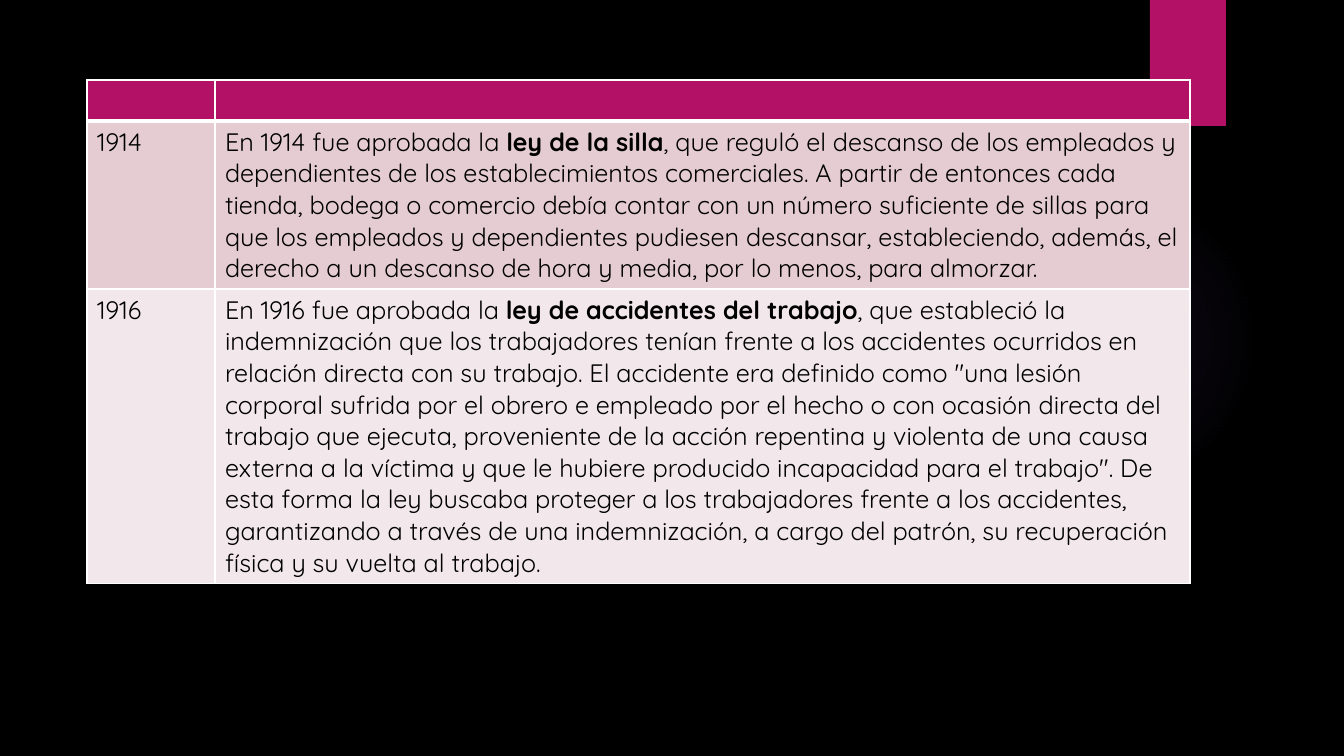
"""Build a slide with a table of two early labour laws."""
from dataclasses import dataclass

from lxml import etree
from pptx import Presentation
from pptx import util as u
from pptx.dml.color import RGBColor
from pptx.enum import shapes
from pptx.oxml import ns

LAWS = [
    ("1914", "En 1914 fue aprobada la ", "ley de la silla",
     ", que reguló el descanso de los empleados y dependientes de los establecimientos "
     "comerciales. A partir de entonces cada tienda, bodega o comercio debía contar con un "
     "número suficiente de sillas para que los empleados y dependientes pudiesen descansar, "
     "estableciendo, además, el derecho a un descanso de hora y media, por lo menos, para "
     "almorzar."),
    ("1916", "En 1916 fue aprobada la ", "ley de accidentes del trabajo",
     ", que estableció la indemnización que los trabajadores tenían frente a los accidentes "
     "ocurridos en relación directa con su trabajo. El accidente era definido como \"una "
     "lesión corporal sufrida por el obrero e empleado por el hecho o con ocasión directa del "
     "trabajo que ejecuta, proveniente de la acción repentina y violenta de una causa externa "
     "a la víctima y que le hubiere producido incapacidad para el trabajo\". De esta forma la "
     "ley buscaba proteger a los trabajadores frente a los accidentes, garantizando a través "
     "de una indemnización, a cargo del patrón, su recuperación física y su vuelta al trabajo."),
]
GLOW = (949, 184, 310, 310)
GLOW_STOPS = [(0, 7), (36, 6), (69, 0)]
RIBBON = (1150, 0, 76, 126)
TABLE_LEFT, TABLE_TOP = 87, 80
COLUMNS = [128, 975]
ROWS = [41, 168, 294]
PX = 914400 / 100.8


@dataclass(frozen=True)
class Theme:
    back: str = "000000"
    accent: str = "B31166"
    glow: str = "9B6BF2"
    ink: str = "000000"
    rule: str = "FFFFFF"
    bands: tuple = ("E5CCD3", "F2E7EA")
    font: str = "Quicksand"
    size: int = 18
    thin: int = 1
    thick: int = 3


THEME = Theme()


def px(length):
    return u.Emu(round(length * PX))


def paint(fill, colour):
    fill.solid()
    fill.fore_color.rgb = RGBColor.from_string(colour)


def add_plain(page, kind, bounds, colour):
    shape = page.shapes.add_shape(kind, *map(px, bounds))
    shape.shadow.inherit = False
    shape.line.fill.background()
    paint(shape.fill, colour)
    return shape


def add_glow(page):
    shape = add_plain(page, shapes.MSO_SHAPE.OVAL, GLOW, THEME.glow)
    stops = "".join(
        f'<a:gs pos="{place * 1000}"><a:srgbClr val="{THEME.glow}">'
        f'<a:alpha val="{alpha * 1000}"/></a:srgbClr></a:gs>'
        for place, alpha in GLOW_STOPS)
    gradient = etree.fromstring(
        f'<a:gradFill {ns.nsdecls("a")}><a:gsLst>{stops}</a:gsLst><a:path path="circle">'
        '<a:fillToRect l="50000" t="50000" r="50000" b="50000"/></a:path></a:gradFill>')
    properties = shape._element.spPr
    properties.replace(properties.find(ns.qn("a:solidFill")), gradient)


def add_borders(cell, top, bottom):
    widths = {"L": THEME.thin, "R": THEME.thin, "T": top, "B": bottom}
    properties = cell._tc.get_or_add_tcPr()
    for place, (side, width) in enumerate(widths.items()):
        properties.insert(place, etree.fromstring(
            f'<a:ln{side} {ns.nsdecls("a")} w="{u.Pt(width)}"><a:solidFill>'
            f'<a:srgbClr val="{THEME.rule}"/></a:solidFill></a:ln{side}>'))


def add_span(cell, words, bold=False):
    span = cell.text_frame.paragraphs[0].add_run()
    span.text = words
    span.font.name = THEME.font
    span.font.size = u.Pt(THEME.size)
    span.font.bold = bold
    span.font.color.rgb = RGBColor.from_string(THEME.ink)


def add_laws(page):
    bounds = (TABLE_LEFT, TABLE_TOP, sum(COLUMNS), sum(ROWS))
    table = page.shapes.add_table(len(ROWS), len(COLUMNS), *map(px, bounds)).table
    table.first_row = table.horz_banding = False
    for column, width in zip(table.columns, COLUMNS):
        column.width = px(width)
    fills = (THEME.accent, *THEME.bands)
    for index, (row, height, colour) in enumerate(zip(table.rows, ROWS, fills)):
        row.height = px(height)
        for cell in row.cells:
            paint(cell.fill, colour)
            add_borders(cell, THEME.thick if index == 1 else THEME.thin,
                        THEME.thick if index == 0 else THEME.thin)
    for index, (year, opening, law, detail) in enumerate(LAWS, start=1):
        add_span(table.cell(index, 0), year)
        body = table.cell(index, 1)
        add_span(body, opening)
        add_span(body, law, bold=True)
        add_span(body, detail)


def main():
    deck = Presentation()
    deck.slide_width, deck.slide_height = px(1344), px(756)
    page = deck.slides.add_slide(deck.slide_layouts[6])
    paint(page.background.fill, THEME.back)
    add_glow(page)
    add_plain(page, shapes.MSO_SHAPE.RECTANGLE, RIBBON, THEME.accent)
    add_laws(page)
    deck.save("out.pptx")


if __name__ == "__main__":
    main()
